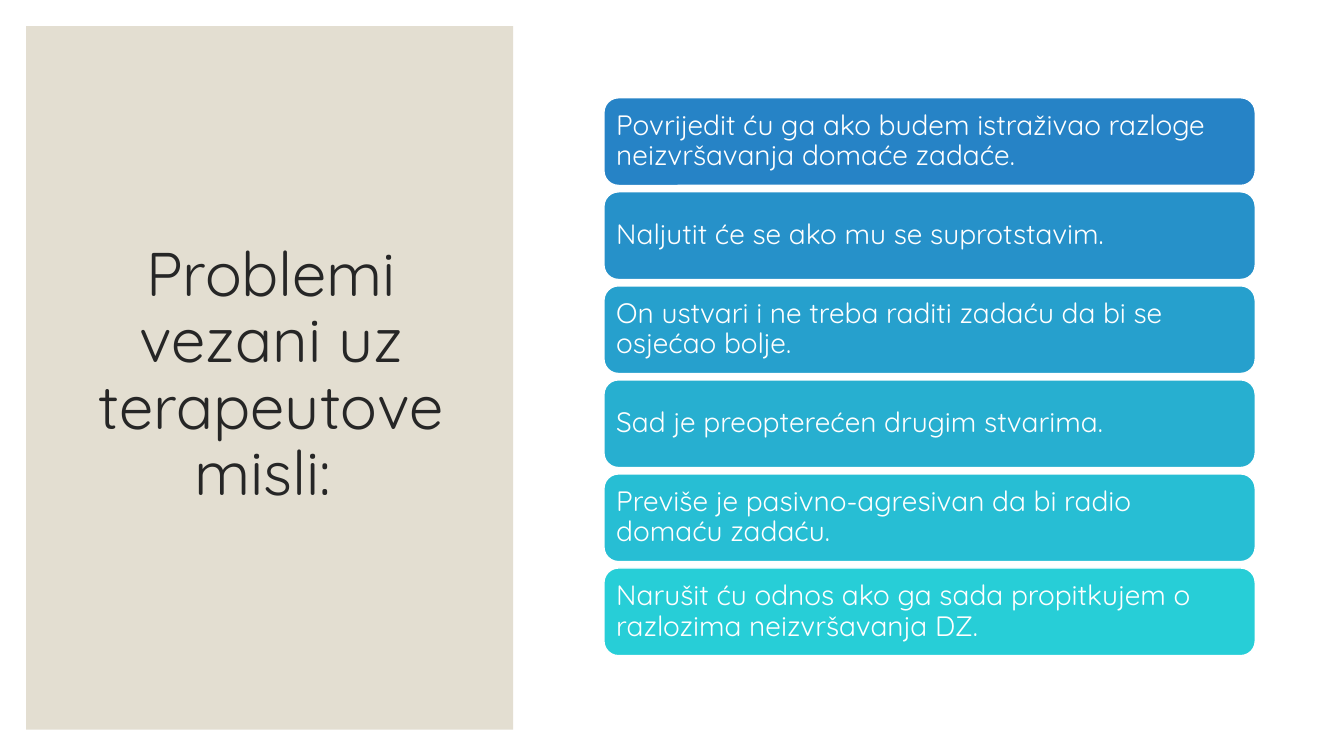
"""Build a slide listing problems tied to the therapist's thoughts."""
from dataclasses import dataclass

from pptx import Presentation
from pptx.dml.color import RGBColor
from pptx.enum.shapes import MSO_SHAPE as Preset
from pptx.enum.text import MSO_ANCHOR as Anchor, PP_ALIGN as Align
from pptx.util import Inches, Pt


@dataclass(frozen=True)
class Theme:
    font: str = "Quicksand"
    title_size: int = 44
    thought_size: int = 20
    white: str = "FFFFFF"
    panel: str = "E3DED1"
    ink: str = "262626"
    thoughts: tuple = ("2683C6", "2691C9", "26A0CD", "27AFD0", "27BED4", "27CED7")


theme = Theme()
thoughts = [
    "Povrijedit ću ga ako budem istraživao razloge neizvršavanja domaće zadaće.",
    "Naljutit će se ako mu se suprotstavim.",
    "On ustvari i ne treba raditi zadaću da bi se osjećao bolje.",
    "Sad je preopterećen drugim stvarima.",
    "Previše je pasivno-agresivan da bi radio domaću zadaću.",
    "Narušit ću odnos ako ga sada propitkujem o razlozima neizvršavanja DZ.",
]


def add_block(preset, left, top, width, height, fill):
    block = slide.shapes.add_shape(
        preset, Inches(left), Inches(top), Inches(width), Inches(height))
    block.shadow.inherit = False
    block.fill.solid()
    block.fill.fore_color.rgb = RGBColor.from_string(fill)
    return block


def write(frame, text, size, color, align):
    frame.word_wrap = True
    frame.vertical_anchor = Anchor.MIDDLE
    paragraph = frame.paragraphs[0]
    paragraph.alignment = align
    paragraph.line_spacing = 0.9
    run = paragraph.add_run()
    run.text = text
    run.font.name = theme.font
    run.font.size = Pt(size)
    run.font.color.rgb = RGBColor.from_string(color)


deck = Presentation()
deck.slide_width, deck.slide_height = Inches(13.33), Inches(7.5)
slide = deck.slides.add_slide(deck.slide_layouts[6])
slide.background.fill.solid()
slide.background.fill.fore_color.rgb = RGBColor.from_string(theme.white)

panel = add_block(Preset.RECTANGLE, 0.26, 0.26, 4.83, 6.98, theme.panel)
panel.line.fill.background()

title = slide.shapes.add_textbox(Inches(0.63), Inches(0.61), Inches(4.12), Inches(6.24))
write(title.text_frame, "Problemi vezani uz terapeutove misli: ",
      theme.title_size, theme.ink, Align.CENTER)

first_top, pitch = 0.97, 0.933
for row, (thought, fill) in enumerate(zip(thoughts, theme.thoughts)):
    bar = add_block(Preset.ROUNDED_RECTANGLE, 5.99, first_top + row * pitch, 6.46, 0.87, fill)
    bar.line.color.rgb = RGBColor.from_string(theme.white)
    bar.line.width = Pt(1)
    frame = bar.text_frame
    frame.margin_left = frame.margin_right = Inches(0.08)
    frame.margin_top = frame.margin_bottom = Inches(0.08)
    write(frame, thought, theme.thought_size, theme.white, Align.LEFT)

deck.save("out.pptx")
